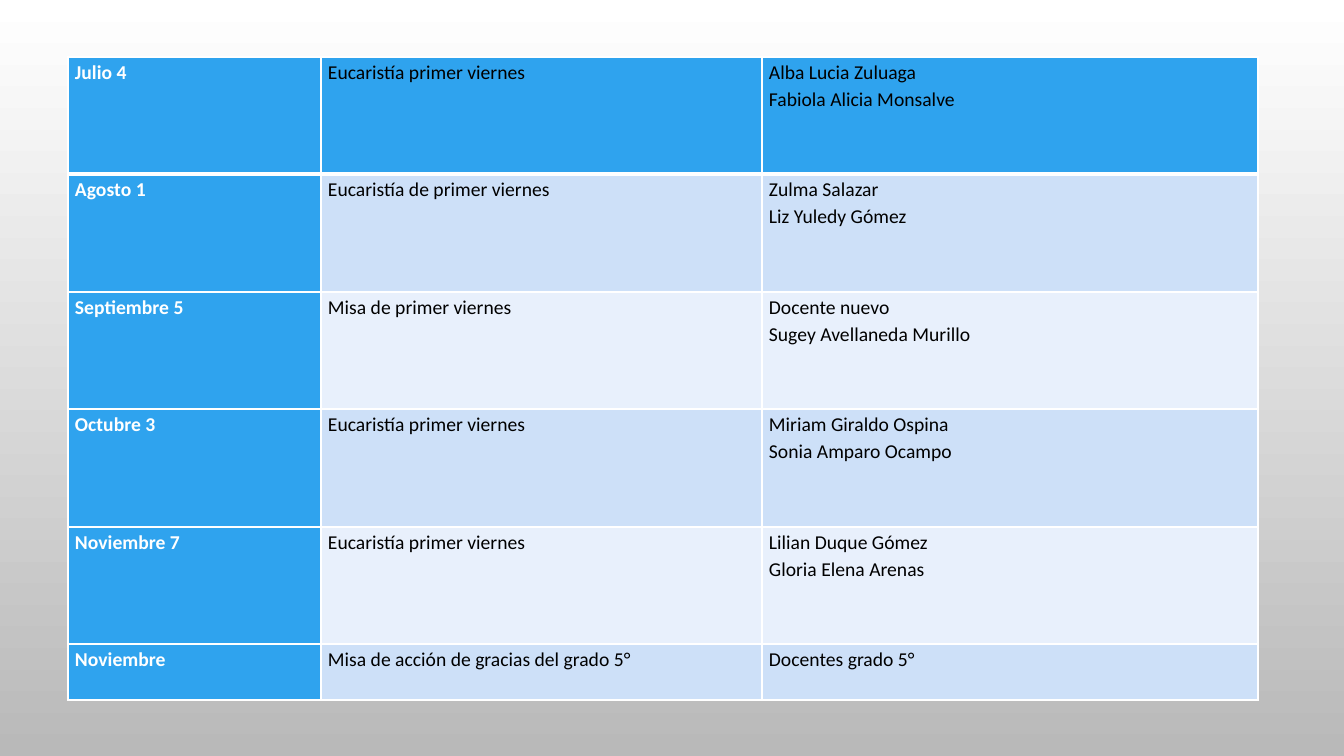
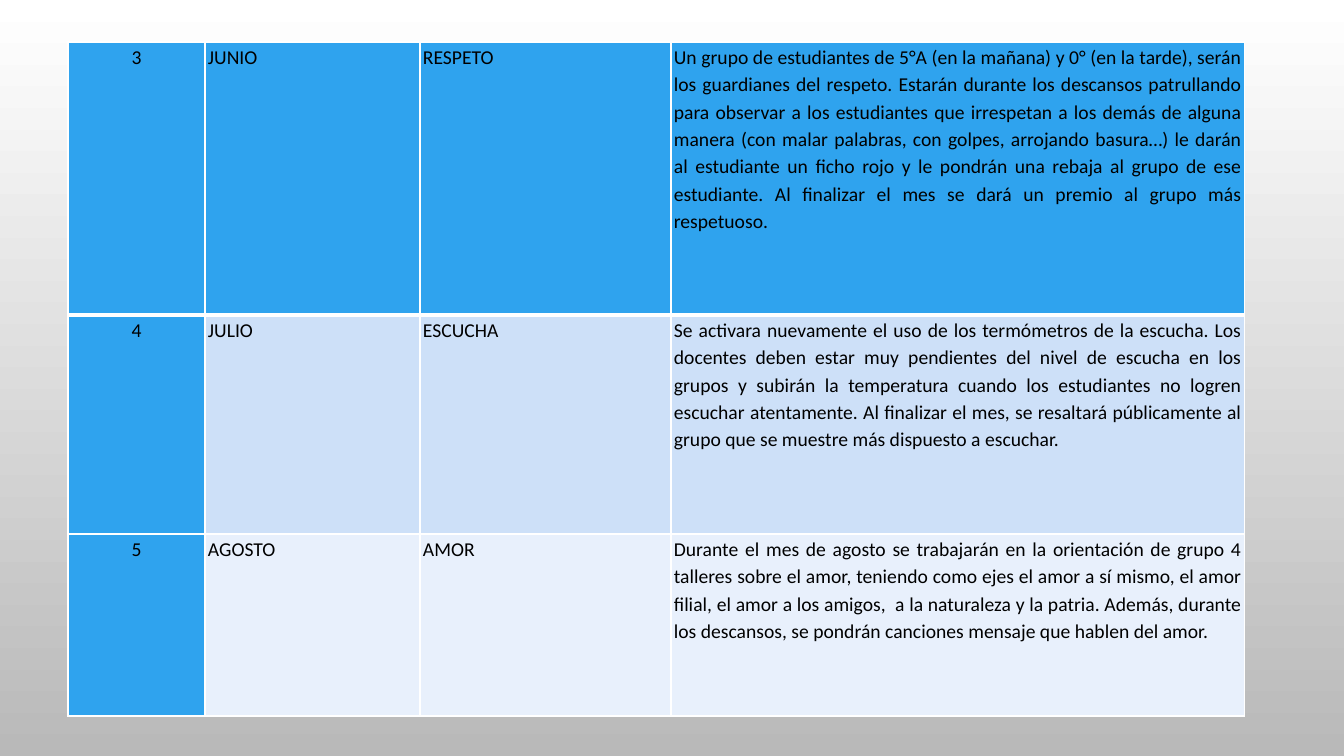
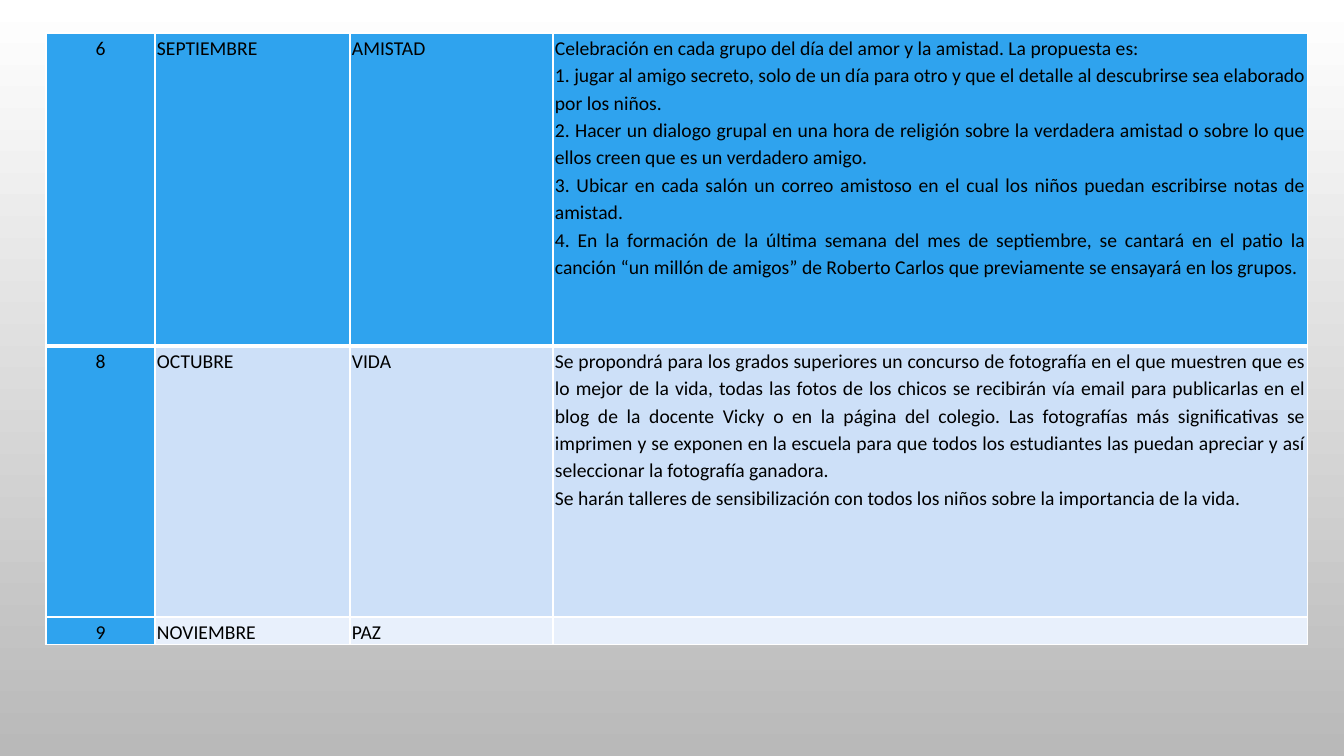
from lxml.etree import SubElement
from pptx import Presentation
from pptx.dml.color import RGBColor
from pptx.enum.text import PP_ALIGN
from pptx.oxml.ns import qn
from pptx.util import Pt

SCALE = 12192000 / 1344
WHITE = RGBColor(0xFF, 0xFF, 0xFF)
BLACK = RGBColor(0x00, 0x00, 0x00)
GRAY = RGBColor(0xB9, 0xB9, 0xB9)
BLUE = RGBColor(0x2F, 0xA3, 0xEE)
BANDS = (RGBColor(0xE8, 0xF0, 0xFC), RGBColor(0xCD, 0xE0, 0xF8))
FONT = "Calibri"
SIZE = 14

MASSES = [
    ("Julio 4", "Eucaristía primer viernes", "Alba Lucia Zuluaga\nFabiola Alicia Monsalve"),
    ("Agosto 1", "Eucaristía de primer viernes", "Zulma Salazar\nLiz Yuledy Gómez"),
    ("Septiembre 5", "Misa de primer viernes", "Docente nuevo\nSugey Avellaneda Murillo"),
    ("Octubre 3", "Eucaristía primer viernes", "Miriam Giraldo Ospina\nSonia Amparo Ocampo"),
    ("Noviembre 7", "Eucaristía primer viernes", "Lilian Duque Gómez\nGloria Elena Arenas"),
    ("Noviembre", "Misa de acción de gracias del grado 5°", "Docentes grado 5°"),
]
VALUES_WINTER = [
    ("3", "JUNIO", "RESPETO",
     "Un grupo de estudiantes de 5°A (en la mañana) y 0° (en la tarde), serán los guardianes "
     "del respeto. Estarán durante los descansos patrullando para observar a los estudiantes "
     "que irrespetan a los demás de alguna manera (con malar palabras, con golpes, arrojando "
     "basura…) le darán al estudiante un ficho rojo y le pondrán una rebaja al grupo de ese "
     "estudiante. Al finalizar el mes se dará un premio al grupo más respetuoso."),
    ("4", "JULIO", "ESCUCHA",
     "Se activara nuevamente el uso de los termómetros de la escucha. Los docentes deben estar "
     "muy pendientes del nivel de escucha en los grupos y subirán la temperatura cuando los "
     "estudiantes no logren escuchar atentamente. Al finalizar el mes, se resaltará "
     "públicamente al grupo que se muestre más dispuesto a escuchar."),
    ("5", "AGOSTO", "AMOR",
     "Durante el mes de agosto se trabajarán en la orientación de grupo 4 talleres sobre el "
     "amor, teniendo como ejes el amor a sí mismo, el amor filial, el amor a los amigos,  a la "
     "naturaleza y la patria. Además, durante los descansos, se pondrán canciones mensaje que "
     "hablen del amor."),
]
VALUES_AUTUMN = [
    ("6", "SEPTIEMBRE", "AMISTAD",
     "Celebración en cada grupo del día del amor y la amistad. La propuesta es:\n"
     "1. jugar al amigo secreto, solo de un día para otro y que el detalle al descubrirse sea "
     "elaborado por los niños.\n"
     "2. Hacer un dialogo grupal en una hora de religión sobre la verdadera amistad o sobre lo "
     "que ellos creen que es un verdadero amigo.\n"
     "3. Ubicar en cada salón un correo amistoso en el cual los niños puedan escribirse notas "
     "de amistad.\n"
     "4. En la formación de la última semana del mes de septiembre, se cantará en el patio la "
     "canción “un millón de amigos” de Roberto Carlos que previamente se ensayará en los grupos."),
    ("8", "OCTUBRE", "VIDA",
     "Se propondrá para los grados superiores un concurso de fotografía en el que muestren que "
     "es lo mejor de la vida, todas las fotos de los chicos se recibirán vía email para "
     "publicarlas en el blog de la docente Vicky o en la página del colegio. Las fotografías "
     "más significativas se imprimen y se exponen en la escuela para que todos los estudiantes "
     "las puedan apreciar y así seleccionar la fotografía ganadora.\n"
     "Se harán talleres de sensibilización con todos los niños sobre la importancia de la vida."),
    ("9", "NOVIEMBRE", "PAZ", ""),
]


def px(length):
    return round(length * SCALE)


def write(frame, text, color=BLACK, bold=False, align=PP_ALIGN.JUSTIFY):
    for index, line in enumerate(text.split("\n")):
        paragraph = frame.paragraphs[0] if index == 0 else frame.add_paragraph()
        paragraph.alignment = align
        paragraph.line_spacing = 1.15
        if not line:
            paragraph._p.get_or_add_endParaRPr().set("sz", str(SIZE * 100))
            continue
        run = paragraph.add_run()
        run.text = line
        run.font.name = FONT
        run.font.size = Pt(SIZE)
        run.font.bold = bold
        run.font.color.rgb = color


class Deck:
    """Holds the presentation, its shared style and the current slide."""

    def __init__(self):
        self.presentation = Presentation()
        self.presentation.slide_width = px(1344)
        self.presentation.slide_height = px(756)
        self.slide = None

    def add_slide(self):
        self.slide = self.presentation.slides.add_slide(self.presentation.slide_layouts[6])
        fill = self.slide.background.fill
        fill.gradient()
        fill.gradient_angle = 270
        for stop, color in zip(fill.gradient_stops, (WHITE, GRAY)):
            stop.color.rgb = color

    def borders(self, cell, **widths):
        properties = cell._tc.get_or_add_tcPr()
        for side in "LRTB":
            line = SubElement(properties, qn(f"a:ln{side}"), w=str(Pt(widths.get(side, 1))))
            solid = SubElement(line, qn("a:solidFill"))
            SubElement(solid, qn("a:srgbClr"), val=str(WHITE))

    def table(self, left, top, widths, heights, rows, inset, **key_format):
        frame = self.slide.shapes.add_table(
            len(rows), len(widths), px(left), px(top), px(sum(widths)), px(sum(heights)))
        table = frame.table
        for column, width in zip(table.columns, widths):
            column.width = px(width)
        for row, height in zip(table.rows, heights):
            row.height = px(height)
        for r, texts in enumerate(rows):
            for c, text in enumerate(texts):
                cell = table.cell(r, c)
                cell.margin_left = cell.margin_right = px(inset)
                cell.margin_top = cell.margin_bottom = 0
                self.borders(cell, T=3 if r == 1 else 1, B=3 if r == 0 else 1)
                cell.fill.solid()
                cell.fill.fore_color.rgb = BLUE if r == 0 or c == 0 else BANDS[r % 2]
                write(cell.text_frame, text, **(key_format if c == 0 else {}))


def main():
    deck = Deck()
    deck.add_slide()
    deck.table(68, 57, (253, 441, 496), (117, 118, 117, 118, 117, 56), MASSES, 7,
               color=WHITE, bold=True)
    deck.add_slide()
    deck.table(68, 42, (137, 215, 251, 574), (273, 219, 182), VALUES_WINTER, 3,
               align=PP_ALIGN.CENTER)
    deck.add_slide()
    deck.table(46, 33, (109, 195, 203, 755), (313, 271, 27), VALUES_AUTUMN, 2,
               align=PP_ALIGN.CENTER)
    deck.presentation.save("out.pptx")


if __name__ == "__main__":
    main()
